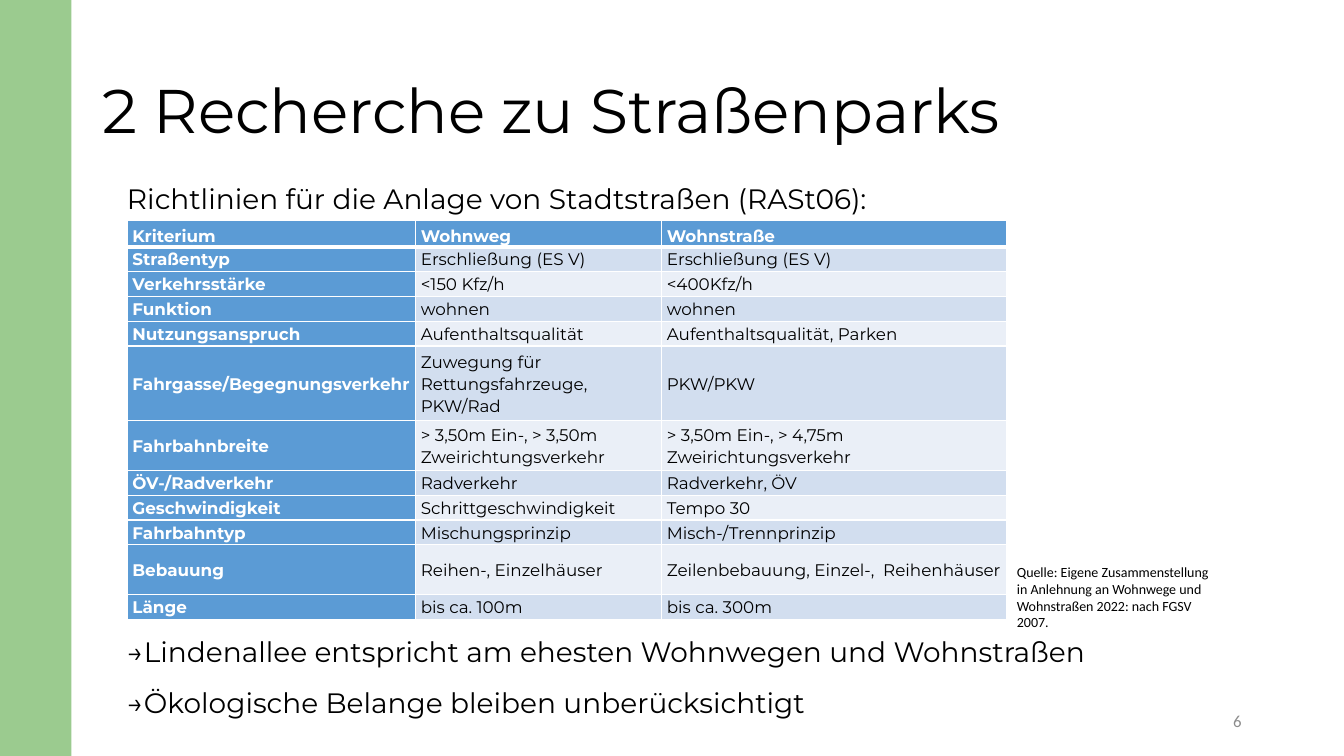
"""Build the slide comparing residential lanes and residential streets."""
from lxml import etree
from pptx import Presentation
from pptx import util as u
from pptx.dml.color import RGBColor
from pptx.enum import shapes, text
from pptx.oxml.ns import qn

TITLE = "2 Recherche zu Straßenparks"
BODY = [
    ("Richtlinien für die Anlage von Stadtstraßen (RASt06):", 10),
    ("→Lindenallee entspricht am ehesten Wohnwegen und Wohnstraßen", 298),
    ("→Ökologische Belange bleiben unberücksichtigt", 10),
]
SOURCE = ("Quelle: Eigene Zusammenstellung in Anlehnung an Wohnwege und "
          "Wohnstraßen 2022: nach FGSV 2007.")
PAGE_NUMBER = "6"
HEADER = ("Kriterium", "Wohnweg", "Wohnstraße")
CRITERIA = [
    ("Straßentyp", "Erschließung (ES V)", "Erschließung (ES V)"),
    ("Verkehrsstärke", "<150 Kfz/h", "<400Kfz/h"),
    ("Funktion", "wohnen", "wohnen"),
    ("Nutzungsanspruch", "Aufenthaltsqualität", "Aufenthaltsqualität, Parken"),
    ("Fahrgasse/Begegnungsverkehr", "Zuwegung für Rettungsfahrzeuge, PKW/Rad", "PKW/PKW"),
    ("Fahrbahnbreite", "> 3,50m Ein-, > 3,50m Zweirichtungsverkehr",
     "> 3,50m Ein-, > 4,75m Zweirichtungsverkehr"),
    ("ÖV-/Radverkehr", "Radverkehr", "Radverkehr, ÖV"),
    ("Geschwindigkeit", "Schrittgeschwindigkeit", "Tempo 30"),
    ("Fahrbahntyp", "Mischungsprinzip", "Misch-/Trennprinzip"),
    ("Bebauung", "Reihen-, Einzelhäuser", "Zeilenbebauung, Einzel-,  Reihenhäuser"),
    ("Länge", "bis ca. 100m", "bis ca. 300m"),
]
ROW_LINES = (1, 1, 1, 1, 3, 2, 1, 1, 1, 2, 1)
COLUMN_WIDTHS = (206, 175.75, 246.5)
HEADER_HEIGHT, LINE_HEIGHT = 18.5, 17.75
COLORS = {"green": "9BCB8F", "blue": "5B9BD5", "band_dark": "D2DEEF",
          "band_light": "EAEFF7", "white": "FFFFFF", "black": "000000", "gray": "8C8C8C"}
HEADING_FONT, SMALL_FONT = "Montserrat", "Calibri"


def color(name):
    return RGBColor.from_string(COLORS[name])


def format_paragraph(paragraph, size, font_name, color_name="black", bold=False,
                     align=text.PP_ALIGN.LEFT):
    font = paragraph.font
    font.size, font.name, font.bold = u.Pt(size), font_name, bold
    font.color.rgb = color(color_name)
    paragraph.alignment = align


def place(shape, left, top, width, height):
    shape.left, shape.top = u.Pt(left), u.Pt(top)
    shape.width, shape.height = u.Pt(width), u.Pt(height)


def remove_bullet(paragraph):
    properties = paragraph._p.get_or_add_pPr()
    properties.set("marL", "0")
    properties.set("indent", "0")
    etree.SubElement(properties, qn("a:buNone"))


def set_borders(cell, top_width, bottom_width):
    properties = cell._tc.get_or_add_tcPr()
    widths = {"lnL": 1, "lnR": 1, "lnT": top_width, "lnB": bottom_width}
    for index, (side, width) in enumerate(widths.items()):
        line = etree.Element(qn(f"a:{side}"), w=str(u.Pt(width)))
        fill = etree.SubElement(line, qn("a:solidFill"))
        etree.SubElement(fill, qn("a:srgbClr"), val=COLORS["white"])
        properties.insert(index, line)


def add_title(slide):
    title = slide.shapes.title
    place(title, 66, 28.8, 828, 104.4)
    frame = title.text_frame
    frame.text = TITLE
    frame.auto_size = text.MSO_AUTO_SIZE.NONE
    frame.vertical_anchor = text.MSO_ANCHOR.MIDDLE
    paragraph = frame.paragraphs[0]
    paragraph.line_spacing = 0.9
    format_paragraph(paragraph, 44, HEADING_FONT)


def add_body(slide):
    body = slide.placeholders[1]
    place(body, 83.5, 123.84, 841.7, 391)
    frame = body.text_frame
    frame.text = "\n".join(line for line, _ in BODY)
    frame.auto_size = text.MSO_AUTO_SIZE.NONE
    frame.vertical_anchor = text.MSO_ANCHOR.TOP
    for paragraph, (_, space_before) in zip(frame.paragraphs, BODY):
        paragraph.line_spacing = u.Pt(26)
        paragraph.space_before = u.Pt(space_before)
        paragraph.space_after = u.Pt(0)
        remove_bullet(paragraph)
        format_paragraph(paragraph, 20, HEADING_FONT)


def fill_cell(cell, value, row, column):
    is_label = row == 0 or column == 0
    band = "band_dark" if row % 2 else "band_light"
    cell.text = value
    cell.margin_left = cell.margin_right = u.Pt(3.6)
    cell.margin_top = cell.margin_bottom = 0
    cell.vertical_anchor = text.MSO_ANCHOR.BOTTOM if row == 0 else text.MSO_ANCHOR.MIDDLE
    cell.fill.solid()
    cell.fill.fore_color.rgb = color("blue" if is_label else band)
    set_borders(cell, 3 if row == 1 else 1, 3 if row == 0 else 1)
    paragraph = cell.text_frame.paragraphs[0]
    paragraph.line_spacing = 1.07
    format_paragraph(paragraph, 12, HEADING_FONT, "white" if is_label else "black", is_label)


def add_criteria_table(slide):
    rows = [HEADER] + CRITERIA
    heights = [HEADER_HEIGHT] + [lines * LINE_HEIGHT for lines in ROW_LINES]
    frame = slide.shapes.add_table(len(rows), len(HEADER), u.Pt(91), u.Pt(157.75),
                                   u.Pt(sum(COLUMN_WIDTHS)), u.Pt(sum(heights)))
    table = frame.table
    for column, width in zip(table.columns, COLUMN_WIDTHS):
        column.width = u.Pt(width)
    for row, (values, height) in enumerate(zip(rows, heights)):
        table.rows[row].height = u.Pt(height)
        for column, value in enumerate(values):
            fill_cell(table.cell(row, column), value, row, column)


def add_small_text(slide, value, box, size, color_name, align, anchor):
    frame = slide.shapes.add_textbox(*map(u.Pt, box)).text_frame
    frame.word_wrap = True
    frame.vertical_anchor = anchor
    frame.text = value
    format_paragraph(frame.paragraphs[0], size, SMALL_FONT, color_name, align=align)


def main():
    presentation = Presentation()
    presentation.slide_width, presentation.slide_height = u.Pt(960), u.Pt(540)
    slide = presentation.slides.add_slide(presentation.slide_layouts[1])
    sidebar = slide.shapes.add_shape(shapes.MSO_SHAPE.RECTANGLE, 0, 0, u.Pt(51), u.Pt(540))
    sidebar.shadow.inherit = False
    sidebar.fill.solid()
    sidebar.fill.fore_color.rgb = color("green")
    sidebar.line.fill.background()
    add_title(slide)
    add_body(slide)
    add_criteria_table(slide)
    add_small_text(slide, SOURCE, (719.3, 398.9, 152, 55.4), 10, "black",
                   text.PP_ALIGN.LEFT, text.MSO_ANCHOR.TOP)
    add_small_text(slide, PAGE_NUMBER, (678, 500.5, 216, 28.8), 12, "gray",
                   text.PP_ALIGN.RIGHT, text.MSO_ANCHOR.MIDDLE)
    presentation.save("out.pptx")


if __name__ == "__main__":
    main()
